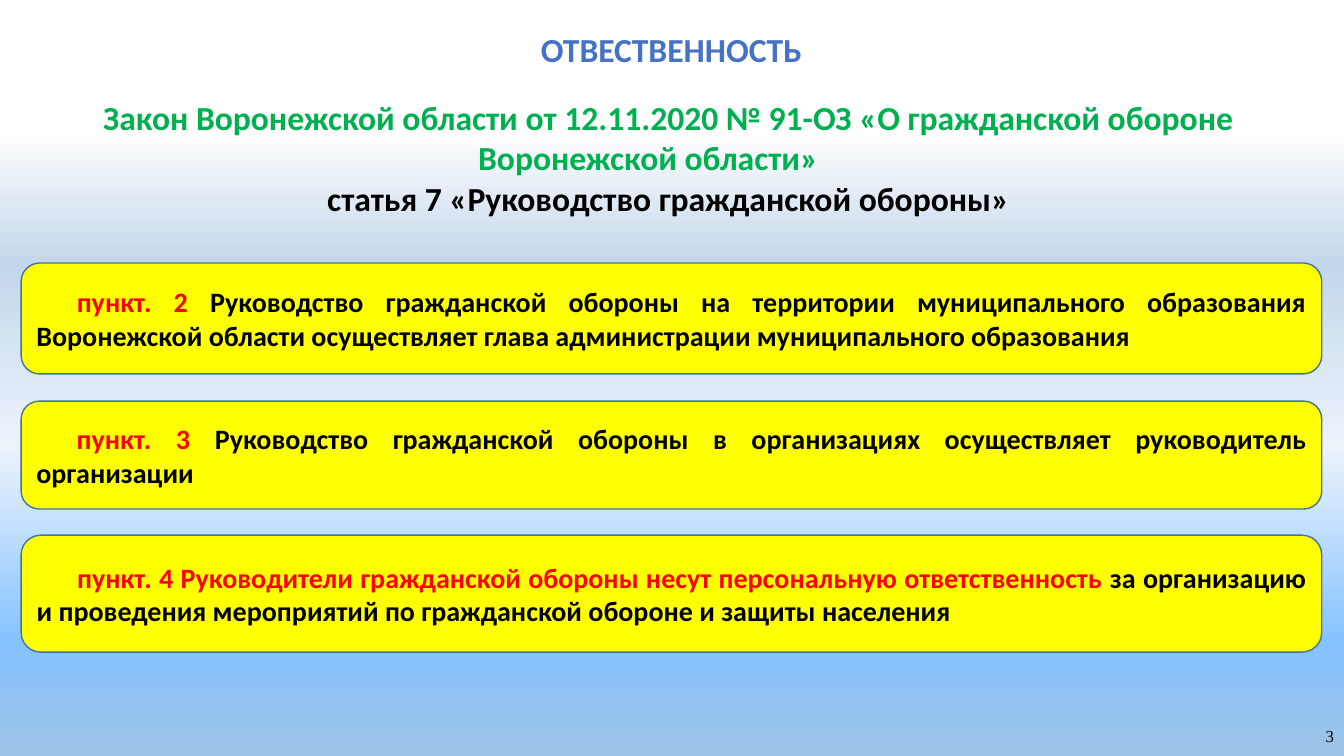
from dataclasses import dataclass

from lxml.etree import SubElement
from pptx import Presentation
from pptx.dml.color import RGBColor
from pptx.enum.shapes import MSO_SHAPE
from pptx.enum.text import MSO_ANCHOR, MSO_AUTO_SIZE, PP_ALIGN
from pptx.oxml.ns import qn
from pptx.util import Inches, Pt


@dataclass(frozen=True)
class Theme:
    heading: str = "4472C4"
    law: str = "00B050"
    accent: str = "FF0000"
    body: str = "000000"
    panel: str = "FFFF00"
    outline: str = "43739E"
    sky: tuple = ((0, "9DC3E6"), (15, "85C2FF"), (41, "ECF3FB"),
                  (65, "C4D6EB"), (83, "FFFFFF"), (99, "FFFFFF"))
    font: str = "Calibri"
    number_font: str = "Times New Roman"
    heading_size: int = 24
    clause_size: int = 20
    number_size: int = 12


THEME = Theme()
MARGIN = 0.21
BLOCK_WIDTH = 12.9
FIRST_LINE = 0.4

CLAUSES = [
    (2.61, 1.1, "пункт. 2 ",
     "Руководство гражданской обороны на территории муниципального образования "
     "Воронежской области осуществляет глава администрации муниципального образования"),
    (3.98, 1.07, "пункт. 3 ",
     "Руководство гражданской обороны в организациях осуществляет руководитель организации"),
    (5.31, 1.16,
     "пункт. 4 Руководители гражданской обороны несут персональную ответственность ",
     "за организацию и проведения мероприятий по гражданской обороне и защиты населения"),
]


def paint_background(slide):
    fill = slide.background.fill
    fill.gradient()
    fill.gradient_angle = 90
    stops = slide.element.find(".//" + qn("a:gsLst"))
    for stop in list(stops):
        stops.remove(stop)
    for position, color in THEME.sky:
        stop = SubElement(stops, qn("a:gs"), pos=str(position * 1000))
        SubElement(stop, qn("a:srgbClr"), val=color)


def write_paragraph(paragraph, parts, size, align, indent=0, font=THEME.font, bold=True):
    paragraph.alignment = align
    if indent:
        properties = paragraph._p.get_or_add_pPr()
        properties.set("marL", "0")
        properties.set("indent", str(Inches(indent)))
    for text, color in parts:
        run = paragraph.add_run()
        run.text = text
        run.font.name = font
        run.font.size = Pt(size)
        run.font.bold = bold
        run.font.color.rgb = RGBColor.from_string(color)


def add_rounded_block(slide, left, top, height):
    block = slide.shapes.add_shape(
        MSO_SHAPE.ROUNDED_RECTANGLE,
        Inches(left), Inches(top), Inches(BLOCK_WIDTH), Inches(height))
    block.shadow.inherit = False
    block.text_frame.word_wrap = True
    block.text_frame.vertical_anchor = MSO_ANCHOR.MIDDLE
    return block


def add_heading(slide, left, top, height, lines, indent=0):
    heading = add_rounded_block(slide, left, top, height)
    heading.fill.background()
    heading.line.fill.background()
    frame = heading.text_frame
    frame.auto_size = MSO_AUTO_SIZE.SHAPE_TO_FIT_TEXT
    frame.margin_left = frame.margin_right = Inches(0.09)
    frame.margin_top = frame.margin_bottom = Inches(0.04)
    for index, line in enumerate(lines):
        paragraph = frame.add_paragraph() if index else frame.paragraphs[0]
        write_paragraph(paragraph, [line], THEME.heading_size, PP_ALIGN.CENTER, indent)


def add_clause(slide, top, height, lead, rest):
    clause = add_rounded_block(slide, MARGIN, top, height)
    clause.fill.solid()
    clause.fill.fore_color.rgb = RGBColor.from_string(THEME.panel)
    clause.line.color.rgb = RGBColor.from_string(THEME.outline)
    clause.line.width = Pt(1)
    write_paragraph(clause.text_frame.paragraphs[0],
                    [(lead, THEME.accent), (rest, THEME.body)],
                    THEME.clause_size, PP_ALIGN.JUSTIFY, FIRST_LINE)


def add_page_number(slide, number):
    page_number = slide.shapes.add_textbox(
        Inches(12.87), Inches(7.1), Inches(0.46), Inches(0.4))
    frame = page_number.text_frame
    frame.word_wrap = True
    frame.vertical_anchor = MSO_ANCHOR.MIDDLE
    write_paragraph(frame.paragraphs[0], [(number, THEME.body)], THEME.number_size,
                    PP_ALIGN.RIGHT, font=THEME.number_font, bold=False)


def main():
    presentation = Presentation()
    presentation.slide_width = Inches(13.33)
    presentation.slide_height = Inches(7.5)
    slide = presentation.slides.add_slide(presentation.slide_layouts[6])
    paint_background(slide)
    add_page_number(slide, "3")
    add_heading(slide, MARGIN, 0.22, 0.54, [("ОТВЕСТВЕННОСТЬ", THEME.heading)])
    add_heading(slide, -0.02, 0.84, 1.44, [
        ("Закон Воронежской области от 12.11.2020 № 91-ОЗ "
         "«О гражданской обороне Воронежской области»", THEME.law),
        ("статья 7 «Руководство гражданской обороны»", THEME.body),
    ], FIRST_LINE)
    for top, height, lead, rest in CLAUSES:
        add_clause(slide, top, height, lead, rest)
    presentation.save("out.pptx")


if __name__ == "__main__":
    main()
